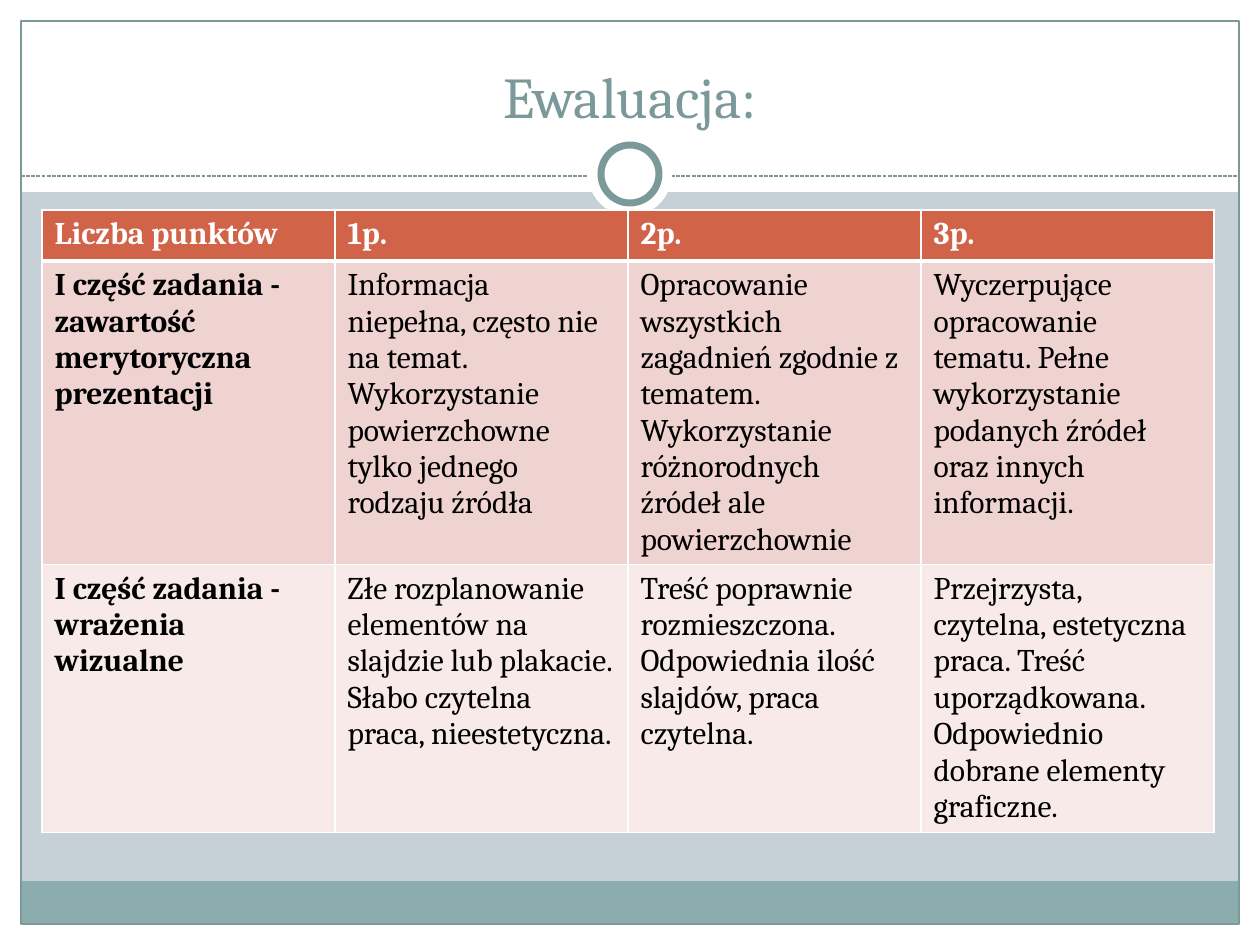
"""Build the evaluation slide with its scoring table."""
import pptx
import pptx.dml.color
import pptx.enum.dml
import pptx.enum.shapes
import pptx.enum.text
import pptx.oxml
import pptx.oxml.ns
import pptx.util

TITLE = "Ewaluacja:"
ROWS = [
    ["Liczba punktów", "1p.", "2p.", "3p."],
    ["I część zadania -\nzawartość merytoryczna prezentacji",
     "Informacja niepełna, często nie na temat. Wykorzystanie powierzchowne "
     "tylko jednego rodzaju źródła",
     "Opracowanie wszystkich zagadnień zgodnie z tematem. Wykorzystanie "
     "różnorodnych źródeł ale powierzchownie",
     "Wyczerpujące opracowanie tematu. Pełne wykorzystanie podanych źródeł "
     "oraz innych informacji."],
    ["I część zadania -\nwrażenia wizualne",
     "Złe rozplanowanie elementów na slajdzie lub plakacie. Słabo czytelna "
     "praca, nieestetyczna.",
     "Treść poprawnie rozmieszczona. Odpowiednia ilość slajdów, praca czytelna.",
     "Przejrzysta, czytelna, estetyczna praca. Treść uporządkowana. "
     "Odpowiednio dobrane elementy graficzne."],
]
ROW_FILLS = ["D16349", "EED3D0", "F7EAE9"]
ROW_HEIGHTS = [51, 303, 268]
COLUMN_WIDTH = 293
CELL_RIGHT_INSET = 14
TABLE_LEFT, TABLE_TOP = 42, 210

WHITE, TEAL, BAND, BACKGROUND = "FFFFFF", "7C999A", "8CADAE", "C5D1D7"
WIDTH, HEIGHT, MARGIN = 1260, 945, 21
INNER_W, INNER_H = WIDTH - 2 * MARGIN, HEIGHT - 2 * MARGIN
RECT = pptx.enum.shapes.MSO_SHAPE.RECTANGLE
OVAL = pptx.enum.shapes.MSO_SHAPE.OVAL
DECOR = [
    (RECT, (0, HEIGHT - MARGIN, WIDTH, MARGIN), WHITE, None, 0),
    (RECT, (0, 0, WIDTH, 192), WHITE, None, 0),
    (RECT, (0, 0, MARGIN, HEIGHT), WHITE, None, 0),
    (RECT, (WIDTH - MARGIN, 0, MARGIN, HEIGHT), WHITE, None, 0),
    (RECT, (MARGIN, 881, INNER_W, 43), BAND, None, 0),
    (RECT, (MARGIN, MARGIN, INNER_W, INNER_H), None, TEAL, 0.75),
]
RINGS = [
    (OVAL, (588, 132, 84, 84), WHITE, None, 0),
    (OVAL, (601, 145, 58, 58), WHITE, TEAL, 4),
]


def px(n):
    return pptx.util.Emu(round(n * 914400 / 126))


def rgb(value):
    return pptx.dml.color.RGBColor.from_string(value)


def paint(fill, color):
    if color:
        fill.solid()
        fill.fore_color.rgb = rgb(color)
    else:
        fill.background()


def write(tf, text, size=18, color="000000", bold=False, align=None):
    for i, line in enumerate(text.split("\n")):
        p = tf.paragraphs[0] if i == 0 else tf.add_paragraph()
        p.alignment = align
        r = p.add_run()
        r.text = line
        r.font.name = "Cambria"
        r.font.size = pptx.util.Pt(size)
        r.font.bold = bold
        r.font.color.rgb = rgb(color)


def add_decor(s, parts):
    for kind, box, fill, line, weight in parts:
        sp = s.shapes.add_shape(kind, *map(px, box))
        sp.shadow.inherit = False
        paint(sp.fill, fill)
        paint(sp.line.fill, line)
        if line:
            sp.line.width = pptx.util.Pt(weight)


def add_divider(s, y):
    line = s.shapes.add_connector(pptx.enum.shapes.MSO_CONNECTOR.STRAIGHT,
                                  px(MARGIN), px(y), px(WIDTH - MARGIN), px(y))
    line.line.color.rgb = rgb(TEAL)
    line.line.width = pptx.util.Pt(0.75)
    line.line.dash_style = pptx.enum.dml.MSO_LINE.SQUARE_DOT
    effects = pptx.oxml.parse_xml(f'<a:effectLst {pptx.oxml.ns.nsdecls("a")}/>')
    line.element.spPr.append(effects)


def add_borders(cell, top, bottom):
    tcPr = cell._tc.get_or_add_tcPr()
    for i, (side, weight) in enumerate(zip("LRTB", (1, 1, top, bottom))):
        tcPr.insert(i, pptx.oxml.parse_xml(
            f'<a:ln{side} {pptx.oxml.ns.nsdecls("a")} w="{weight * 12700}">'
            f'<a:solidFill><a:srgbClr val="{WHITE}"/></a:solidFill></a:ln{side}>'))


def add_scores(s):
    columns = len(ROWS[0])
    table = s.shapes.add_table(len(ROWS), columns, px(TABLE_LEFT), px(TABLE_TOP),
                               px(COLUMN_WIDTH * columns), px(sum(ROW_HEIGHTS))).table
    for column in table.columns:
        column.width = px(COLUMN_WIDTH)
    for i, texts in enumerate(ROWS):
        header = i == 0
        table.rows[i].height = px(ROW_HEIGHTS[i])
        for j, text in enumerate(texts):
            cell = table.cell(i, j)
            cell.margin_right = px(CELL_RIGHT_INSET)
            paint(cell.fill, ROW_FILLS[i])
            add_borders(cell, 3 if i == 1 else 1, 3 if header else 1)
            write(cell.text_frame, text, bold=header or j == 0,
                  color=WHITE if header else "000000")


def add_title(s):
    title = s.shapes.title
    title.left, title.top, title.width, title.height = map(px, (42, 31, 1176, 105))
    tf = title.text_frame
    tf.word_wrap = True
    tf.auto_size = pptx.enum.text.MSO_AUTO_SIZE.NONE
    tf.vertical_anchor = pptx.enum.text.MSO_ANCHOR.BOTTOM
    write(tf, TITLE, size=33, color=TEAL, align=pptx.enum.text.PP_ALIGN.CENTER)
    title.element.getparent().append(title.element)


def main():
    prs = pptx.Presentation()
    prs.slide_width, prs.slide_height = px(WIDTH), px(HEIGHT)
    s = prs.slides.add_slide(prs.slide_layouts[5])
    paint(s.background.fill, BACKGROUND)
    add_decor(s, DECOR)
    add_divider(s, 176)
    add_decor(s, RINGS)
    add_title(s)
    add_scores(s)
    prs.save("out.pptx")


if __name__ == "__main__":
    main()
